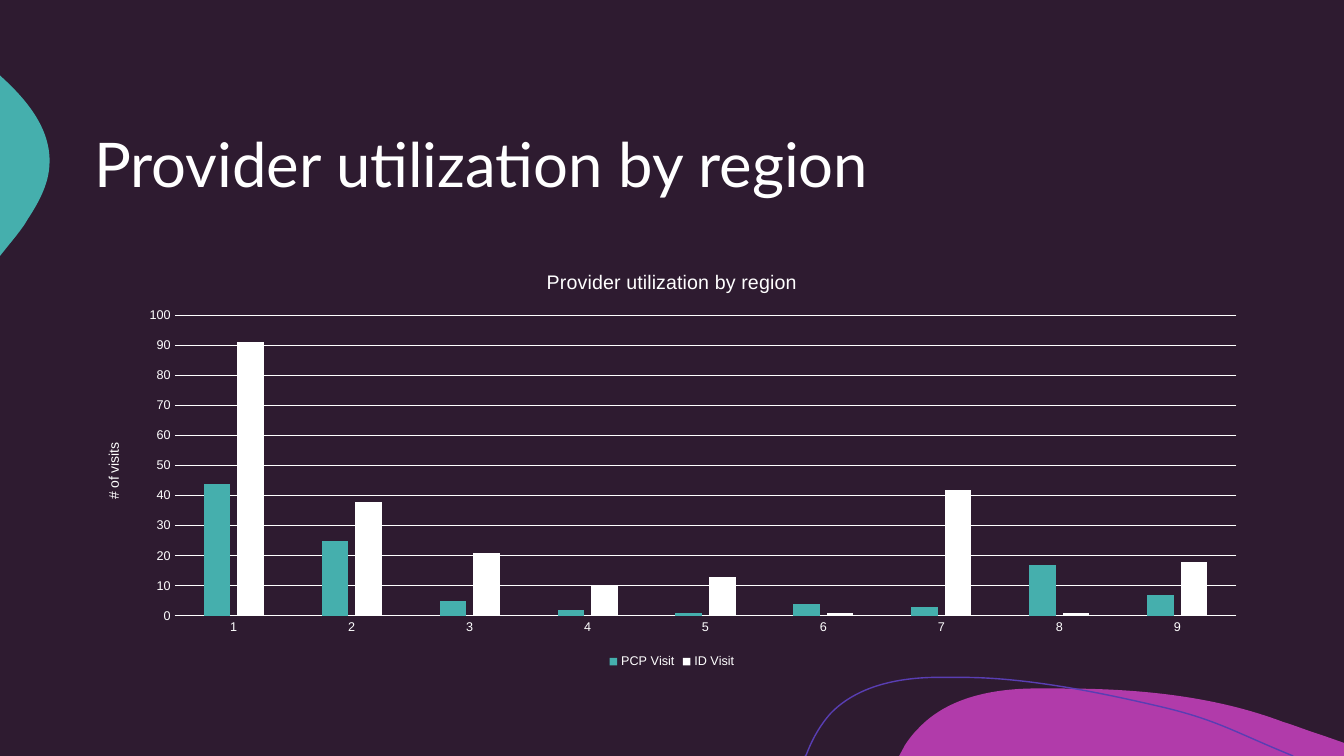
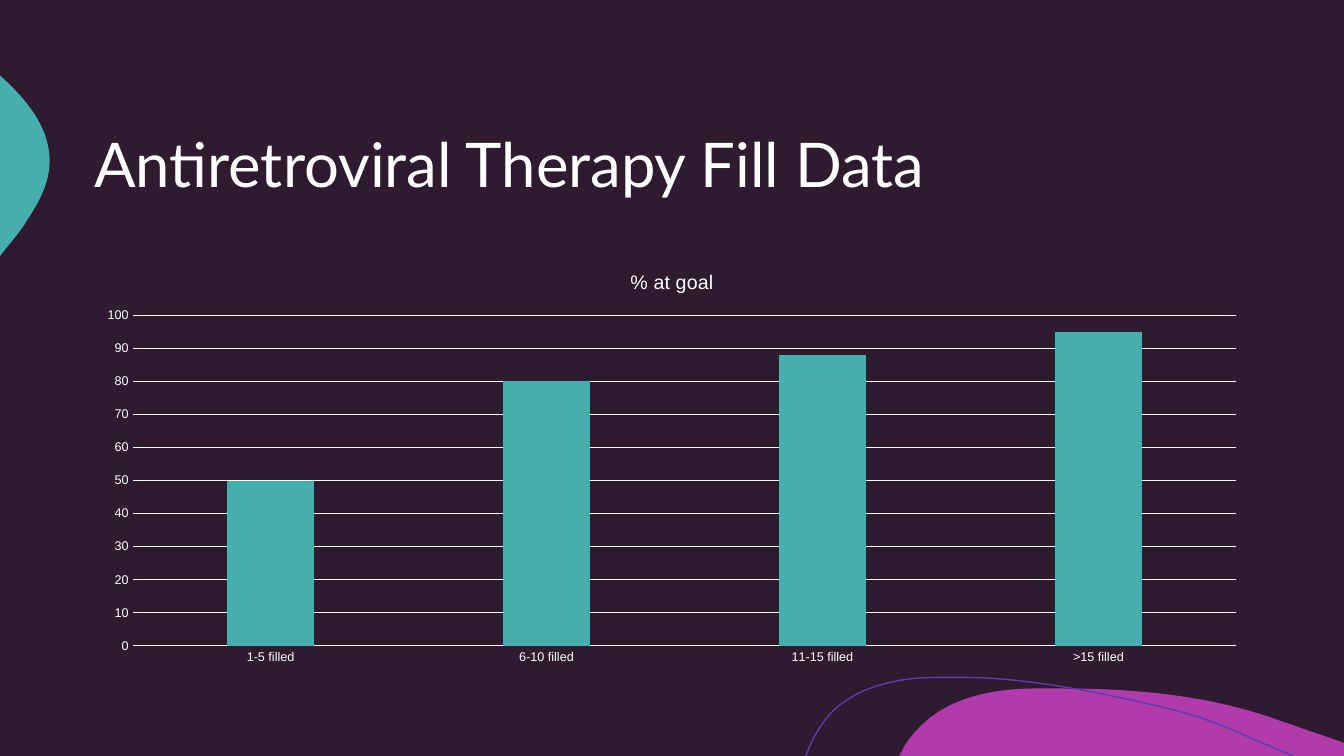
from lxml import etree
from pptx import Presentation
from pptx.chart.data import CategoryChartData
from pptx.dml.color import RGBColor
from pptx.enum.chart import XL_CHART_TYPE, XL_LEGEND_POSITION, XL_TICK_MARK
from pptx.enum.text import MSO_ANCHOR
from pptx.oxml.ns import qn
from pptx.util import Cm, Pt

PLUM = RGBColor(0x2E, 0x1B, 0x30)
MAGENTA = RGBColor(0xB1, 0x3B, 0xAA)
TEAL = RGBColor(0x45, 0xAF, 0xAD)
VIOLET = RGBColor(0x59, 0x3E, 0xB3)
WHITE = RGBColor(0xFF, 0xFF, 0xFF)
TITLE_FONT, CHART_FONT = "Lato", "Arial"

# Content
SLIDES = [
    {
        "title": "Provider utilization by region",
        "chart_title": "Provider utilization by region",
        "value_title": "# of visits",
        "categories": ["1", "2", "3", "4", "5", "6", "7", "8", "9"],
        "series": [
            ("PCP Visit", [44, 25, 5, 2, 1, 4, 3, 17, 7], TEAL),
            ("ID Visit", [91, 38, 21, 10, 13, 1, 42, 1, 18], WHITE),
        ],
    },
    {
        "title": "Antiretroviral Therapy Fill Data",
        "chart_title": "% at goal",
        "value_title": None,
        "categories": ["1-5 filled", "6-10 filled", "11-15 filled", ">15 filled"],
        "series": [("% at goal", [50, 80, 88, 95], TEAL)],
    },
]

# Outlines in cm: a start point, then one point per line or three per curve
MAGENTA_WAVE = [
    (26.77, 17.35),
    [(28.65, 17.35), (30.58, 17.53), (32.33, 18.19)],
    [(32.66, 18.29), (32.97, 18.42), (33.3, 18.52)],
    [(33.87, 18.72)], [(33.87, 19.05)], [(22.66, 19.05)], [(22.81, 18.77)],
    [(22.91, 18.62), (23.01, 18.49), (23.14, 18.36)],
    [(23.85, 17.6), (24.94, 17.37), (25.98, 17.35)],
    [(26.24, 17.35), (26.49, 17.35), (26.77, 17.35)],
]
TEAL_BULGE = [
    (0, 1.9), [(0.03, 1.93)],
    [(0.76, 2.59), (1.37, 3.38), (1.23, 4.32)],
    [(1.17, 4.75), (0.94, 5.16), (0.69, 5.54)],
    [(0.61, 5.69), (0.43, 5.92), (0.2, 6.2)],
    [(0, 6.45)],
]
VIOLET_LINE = [
    (20.29, 19.05), [(20.32, 19.02)],
    [(20.47, 18.62), (20.68, 18.26), (20.93, 17.98)],
    [(21.59, 17.3), (22.58, 17.09), (23.52, 17.07)],
    [(24.26, 17.07)],
    [(25.96, 17.07), (27.94, 17.5), (29.34, 17.83)],
    [(30.71, 18.16), (31.14, 18.46), (32.59, 19.05)],
]

# Shared layout
LEFT, WIDTH = Cm(2.12), Cm(29.63)
TITLE_TOP, TITLE_HEIGHT = Cm(2.12), Cm(4.23)
CHART_TOP, CHART_HEIGHT = Cm(6.35), Cm(10.61)


def bend_segments(sp, segments):
    """Turn the straight segments that have control points into curves."""
    lines = list(sp.element.iter(qn("a:lnTo")))
    for line, segment in zip(lines, segments):
        if len(segment) == 1:
            continue
        curve = etree.Element(qn("a:cubicBezTo"))
        for x, y in segment:
            etree.SubElement(curve, qn("a:pt"), x=str(Cm(x) - sp.left),
                             y=str(Cm(y) - sp.top))
        line.getparent().replace(line, curve)


def add_outline(s, outline, fill=None, line=None):
    start, *segments = outline
    builder = s.shapes.build_freeform(Cm(start[0]), Cm(start[1]))
    ends = [(Cm(x), Cm(y)) for x, y in (segment[-1] for segment in segments)]
    builder.add_line_segments(ends, close=fill is not None)
    sp = builder.convert_to_shape()
    bend_segments(sp, segments)
    sp.shadow.inherit = False
    if fill is None:
        sp.fill.background()
    else:
        sp.fill.solid()
        sp.fill.fore_color.rgb = fill
    if line is None:
        sp.line.fill.background()
    else:
        sp.line.color.rgb = line
        sp.line.width = Pt(1)


def style_font(font, size, name=CHART_FONT):
    font.size = Pt(size)
    font.name = name
    font.bold = False
    font.color.rgb = WHITE


def style_line(line):
    line.color.rgb = WHITE
    line.width = Pt(0.75)


def add_title(s, text):
    tf = s.shapes.add_textbox(LEFT, TITLE_TOP, WIDTH, TITLE_HEIGHT).text_frame
    tf.word_wrap = True
    tf.vertical_anchor = MSO_ANCHOR.MIDDLE
    tf.text = text
    p = tf.paragraphs[0]
    p.line_spacing = 0.9
    style_font(p.runs[0].font, 44, TITLE_FONT)


def set_text(tf, text, size):
    tf.text = text
    style_font(tf.paragraphs[0].runs[0].font, size)


def add_column_chart(s, content):
    data = CategoryChartData()
    data.categories = content["categories"]
    for name, values, _ in content["series"]:
        data.add_series(name, values)
    chart = s.shapes.add_chart(XL_CHART_TYPE.COLUMN_CLUSTERED, LEFT, CHART_TOP,
                               WIDTH, CHART_HEIGHT, data).chart
    style_font(chart.font, 10)
    set_text(chart.chart_title.text_frame, content["chart_title"], 14)

    # Columns
    plot = chart.plots[0]
    plot.gap_width, plot.overlap = 219, -27
    plot.vary_by_categories = False
    for series, (_, _, color) in zip(plot.series, content["series"]):
        series.format.fill.solid()
        series.format.fill.fore_color.rgb = color

    # Axes
    category_axis, value_axis = chart.category_axis, chart.value_axis
    for axis in (category_axis, value_axis):
        axis.major_tick_mark = axis.minor_tick_mark = XL_TICK_MARK.NONE
        style_font(axis.tick_labels.font, 9)
    style_line(category_axis.format.line)
    value_axis.minimum_scale, value_axis.maximum_scale = 0, 100
    value_axis.major_unit = 10
    value_axis.format.line.fill.background()
    style_line(value_axis.major_gridlines.format.line)
    if content["value_title"]:
        set_text(value_axis.axis_title.text_frame, content["value_title"], 10)

    # Legend
    chart.has_legend = len(content["series"]) > 1
    if chart.has_legend:
        chart.legend.position = XL_LEGEND_POSITION.BOTTOM
        chart.legend.include_in_layout = False
        style_font(chart.legend.font, 9)


def add_slide(prs, content):
    s = prs.slides.add_slide(prs.slide_layouts[6])
    s.background.fill.solid()
    s.background.fill.fore_color.rgb = PLUM
    add_outline(s, MAGENTA_WAVE, fill=MAGENTA)
    add_outline(s, TEAL_BULGE, fill=TEAL)
    add_outline(s, VIOLET_LINE, line=VIOLET)
    add_title(s, content["title"])
    add_column_chart(s, content)


def main():
    prs = Presentation()
    prs.slide_width, prs.slide_height = Cm(33.87), Cm(19.05)
    for content in SLIDES:
        add_slide(prs, content)
    prs.save("out.pptx")


if __name__ == "__main__":
    main()
